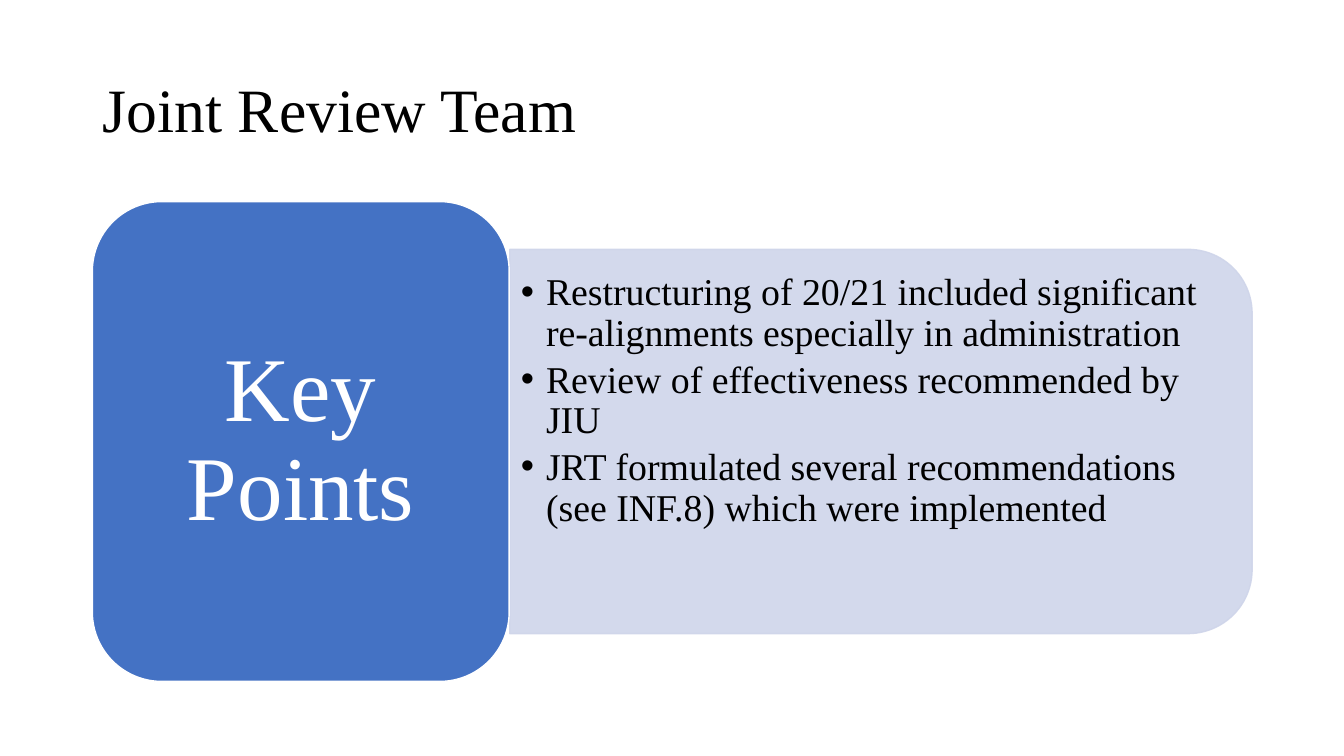
"""Build the Joint Review Team slide with its key points panel."""
from dataclasses import dataclass

from lxml import etree
from pptx import Presentation
from pptx.dml.color import RGBColor
from pptx.enum.shapes import MSO_SHAPE
from pptx.enum.text import MSO_ANCHOR, MSO_AUTO_SIZE, PP_ALIGN
from pptx.oxml.ns import qn
from pptx.util import Pt

ROUND_TILE = MSO_SHAPE.ROUNDED_RECTANGLE
ROUND_PANEL = MSO_SHAPE.ROUND_2_SAME_RECTANGLE
TOP, MIDDLE = MSO_ANCHOR.TOP, MSO_ANCHOR.MIDDLE
LEFT, CENTER = PP_ALIGN.LEFT, PP_ALIGN.CENTER
NO_AUTOFIT = MSO_AUTO_SIZE.NONE
EMU_PER_PX = 9525


@dataclass(frozen=True)
class Theme:
    font: str = "Times New Roman"
    ink: str = "000000"
    white: str = "FFFFFF"
    tile: str = "4472C4"
    panel: str = "CFD5EA"
    title_size: int = 44
    list_size: int = 27
    tile_size: int = 65


@dataclass(frozen=True)
class Box:
    left: int
    top: int
    width: int
    height: int


@dataclass(frozen=True)
class Block:
    kind: MSO_SHAPE
    box: Box
    fill: str
    line: str
    rotation: int = 0
    opacity: int = 100


THEME = Theme()
TITLE_BOX = Box(88, 38, 1104, 139)
LIST_BOX = Box(486, 255, 688, 330)
PANEL = Block(ROUND_PANEL, Box(656, 67, 366, 707), THEME.panel, THEME.panel, 90, 90)
TILE = Block(ROUND_TILE, Box(88, 192, 397, 457), THEME.tile, THEME.white)
KEY_POINTS = [
    "Restructuring of 20/21 included significant re-alignments especially in administration",
    "Review of effectiveness recommended by JIU",
    "JRT formulated several recommendations (see INF.8) which were implemented",
]


def px(length: int) -> int:
    """Turn pixels into EMU."""
    return length * EMU_PER_PX


def place(shape, box: Box) -> None:
    """Move and size a shape."""
    shape.left, shape.top = px(box.left), px(box.top)
    shape.width, shape.height = px(box.width), px(box.height)


def add_block(slide, block: Block):
    """Add a filled preset shape."""
    box = block.box
    shape = slide.shapes.add_shape(
        block.kind, px(box.left), px(box.top), px(box.width), px(box.height))
    shape.rotation = block.rotation
    shape.shadow.inherit = False
    shape.fill.solid()
    shape.fill.fore_color.rgb = RGBColor.from_string(block.fill)
    shape.line.color.rgb = RGBColor.from_string(block.line)
    shape.line.width = Pt(1)
    if block.opacity < 100:
        for color in shape.element.spPr.iter(qn("a:srgbClr")):
            etree.SubElement(color, qn("a:alpha"), val=str(block.opacity * 1000))
    return shape


def add_bullet(paragraph, indent: int) -> None:
    """Give a paragraph a hanging round bullet."""
    properties = paragraph._p.get_or_add_pPr()
    properties.set("marL", str(px(indent)))
    properties.set("indent", str(-px(indent)))
    etree.SubElement(properties, qn("a:buChar"), char="•")


def write(shape, lines: list[str], *, size: int, color: str, align=LEFT, anchor=MIDDLE,
          margins: tuple[int, int] = (10, 5), space_after: int = 0, indent: int = 0) -> None:
    """Fill a shape with formatted paragraphs."""
    frame = shape.text_frame
    frame.word_wrap = True
    frame.auto_size = NO_AUTOFIT
    frame.vertical_anchor = anchor
    frame.margin_left = frame.margin_right = px(margins[0])
    frame.margin_top = frame.margin_bottom = px(margins[1])
    for index, line in enumerate(lines):
        paragraph = frame.paragraphs[0] if index == 0 else frame.add_paragraph()
        paragraph.text = line
        if indent:
            add_bullet(paragraph, indent)
        paragraph.alignment = align
        paragraph.line_spacing = 0.9
        paragraph.space_before = Pt(0)
        paragraph.space_after = Pt(space_after)
        paragraph.font.name = THEME.font
        paragraph.font.size = Pt(size)
        paragraph.font.color.rgb = RGBColor.from_string(color)


def main() -> None:
    """Create the slide and save it."""
    presentation = Presentation()
    presentation.slide_width, presentation.slide_height = px(1280), px(720)
    slide = presentation.slides.add_slide(presentation.slide_layouts[1])

    title, body = slide.shapes.title, slide.placeholders[1]
    place(title, TITLE_BOX)
    write(title, ["Joint Review Team"], size=THEME.title_size, color=THEME.ink)

    panel = add_block(slide, PANEL)
    body.element.addprevious(panel.element)
    place(body, LIST_BOX)
    write(body, KEY_POINTS, size=THEME.list_size, color=THEME.ink, anchor=TOP,
          space_after=4, indent=24)

    tile = add_block(slide, TILE)
    write(tile, ["Key Points"], size=THEME.tile_size, color=THEME.white, align=CENTER,
          margins=(26, 13), space_after=23)

    presentation.save("out.pptx")


if __name__ == "__main__":
    main()
